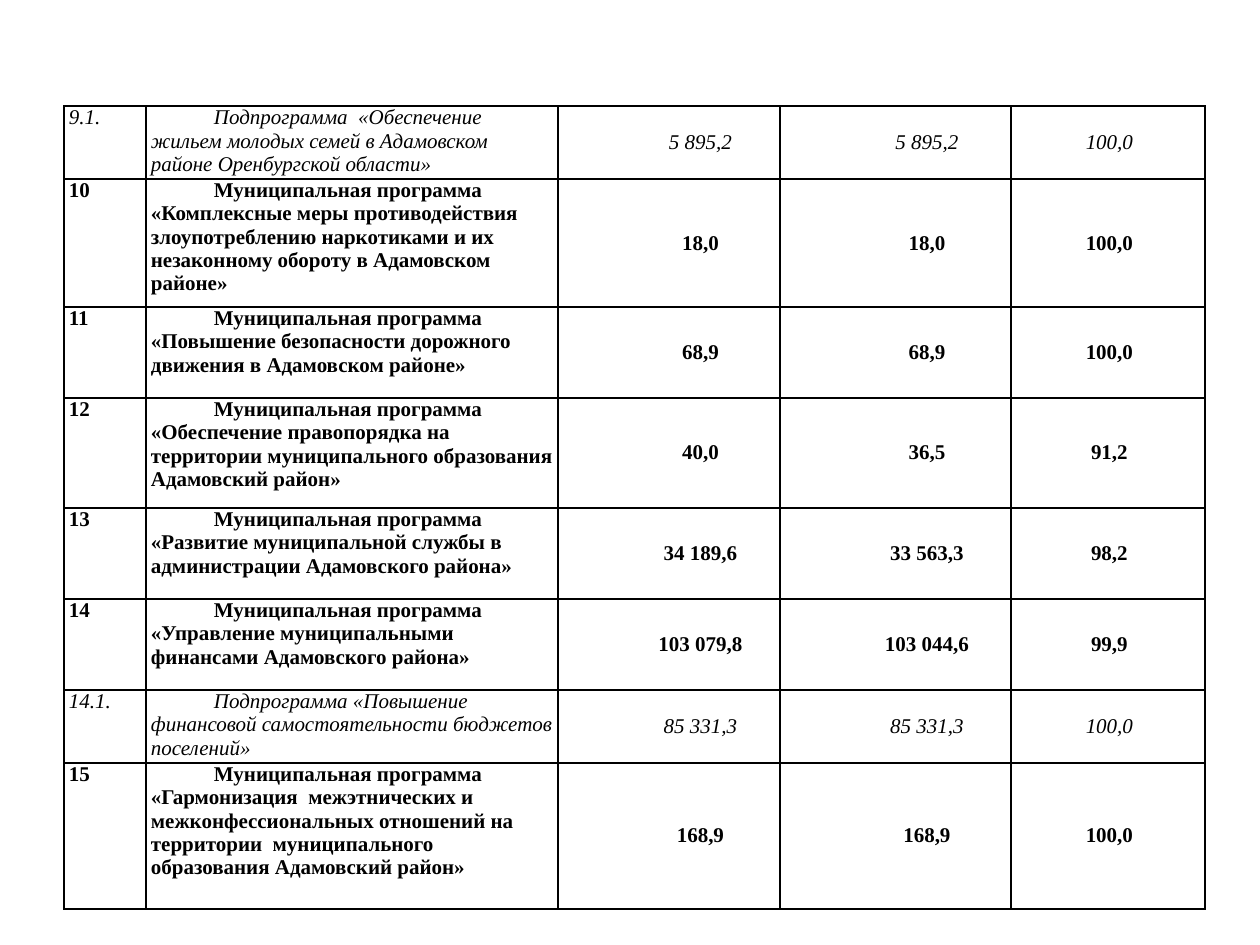
import pptx
import pptx.dml.color
import pptx.enum.text
import pptx.oxml
import pptx.oxml.ns
import pptx.util

SCALE = 914400 / 126
FONT = "Times New Roman"
BLACK = "000000"
INSET = 5
COLUMNS = [82, 412, 222, 231, 194]
INDENTS = [0, 63, 63, 63, 3]
ROWS = [
    (73, "9.1.", "Подпрограмма  «Обеспечение жильем молодых семей в Адамовском районе "
     "Оренбургской области»", "5 895,2", "5 895,2", "100,0"),
    (128, "10", "Муниципальная программа «Комплексные меры противодействия злоупотреблению "
     "наркотиками и их незаконному обороту в Адамовском районе»", "18,0", "18,0", "100,0"),
    (91, "11", "Муниципальная программа «Повышение безопасности дорожного движения "
     "в Адамовском районе»", "68,9", "68,9", "100,0"),
    (110, "12", "Муниципальная программа «Обеспечение правопорядка на территории "
     "муниципального образования Адамовский район»", "40,0", "36,5", "91,2"),
    (91, "13", "Муниципальная программа «Развитие муниципальной службы в администрации "
     "Адамовского района»", "34 189,6", "33 563,3", "98,2"),
    (91, "14", "Муниципальная программа «Управление муниципальными финансами "
     "Адамовского района»", "103 079,8", "103 044,6", "99,9"),
    (73, "14.1.", "Подпрограмма «Повышение финансовой самостоятельности бюджетов "
     "поселений»", "85 331,3", "85 331,3", "100,0"),
    (146, "15", "Муниципальная программа «Гармонизация  межэтнических и межконфессиональных "
     "отношений на территории  муниципального образования Адамовский район»",
     "168,9", "168,9", "100,0"),
]


def px(n):
    return pptx.util.Emu(round(n * SCALE))


def color(value):
    return pptx.dml.color.RGBColor.from_string(value)


def set_borders(cell):
    tc_pr = cell._tc.get_or_add_tcPr()
    for side in ("lnL", "lnR", "lnT", "lnB"):
        tc_pr.append(pptx.oxml.parse_xml(
            f'<a:{side} {pptx.oxml.ns.nsdecls("a")} w="{pptx.util.Pt(1)}">'
            f'<a:solidFill><a:srgbClr val="{BLACK}"/></a:solidFill></a:{side}>'))


def fill_cell(cell, text, indent, centered, subprogram):
    cell.margin_left = cell.margin_right = px(INSET)
    cell.margin_top = cell.margin_bottom = 0
    set_borders(cell)
    cell.fill.background()
    p = cell.text_frame.paragraphs[0]
    p.text = text
    p._p.get_or_add_pPr().set("indent", str(px(indent)))
    if centered:
        cell.vertical_anchor = pptx.enum.text.MSO_ANCHOR.MIDDLE
        p.alignment = pptx.enum.text.PP_ALIGN.CENTER
    p.font.name = FONT
    p.font.size = pptx.util.Pt(12)
    p.font.bold = not subprogram
    p.font.italic = subprogram
    p.font.color.rgb = color(BLACK)


def add_program_table(s):
    height = sum(row[0] for row in ROWS)
    table = s.shapes.add_table(len(ROWS), len(COLUMNS), px(64), px(106),
                               px(sum(COLUMNS)), px(height)).table
    table.first_row = table.horz_banding = False
    for column, width in zip(table.columns, COLUMNS):
        column.width = px(width)
    for row, (row_height, *texts) in zip(table.rows, ROWS):
        row.height = px(row_height)
        subprogram = texts[0].endswith(".")
        for i, (cell, text) in enumerate(zip(row.cells, texts)):
            fill_cell(cell, text, INDENTS[i], i >= 2, subprogram)


def main():
    prs = pptx.Presentation()
    prs.slide_width = px(1260)
    prs.slide_height = px(945)
    s = prs.slides.add_slide(prs.slide_layouts[6])
    add_program_table(s)
    prs.save("out.pptx")


if __name__ == "__main__":
    main()
